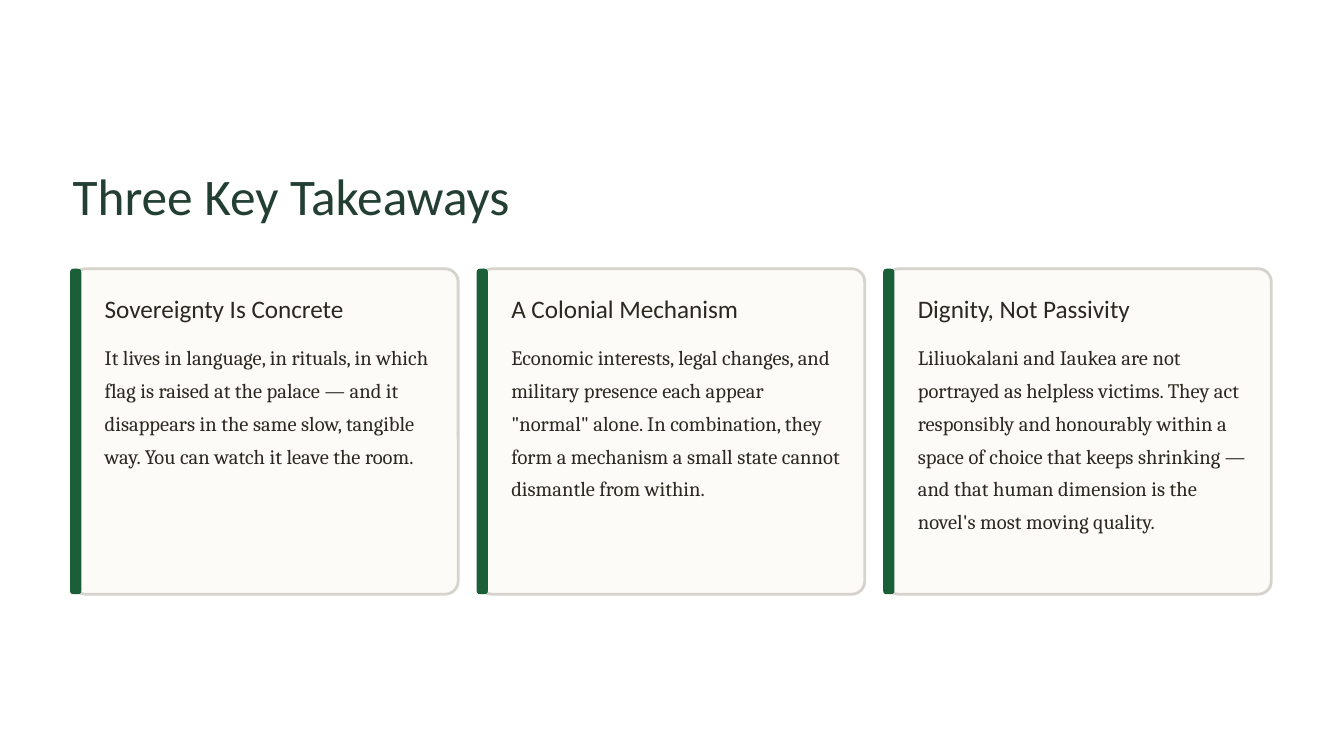
"""Build the three key takeaways slide."""
from pptx import Presentation
from pptx import util as u
from pptx.dml import color
from pptx.enum import shapes, text

TAKEAWAYS = [
    ("Sovereignty Is Concrete",
     "It lives in language, in rituals, in which flag is raised at the palace — and it "
     "disappears in the same slow, tangible way. You can watch it leave the room."),
    ("A Colonial Mechanism",
     "Economic interests, legal changes, and military presence each appear \"normal\" alone. "
     "In combination, they form a mechanism a small state cannot dismantle from within."),
    ("Dignity, Not Passivity",
     "Liliuokalani and Iaukea are not portrayed as helpless victims. They act responsibly and "
     "honourably within a space of choice that keeps shrinking — and that human dimension is "
     "the novel's most moving quality."),
]


def rgb(value):
    """Turn a hex string into a colour."""
    return color.RGBColor.from_string(value)


class TakeawayPage:
    """Hold the style and the current slide."""

    HEADING_FONT, BODY_FONT = "Calibri", "Cambria"
    TITLE, INK, ACCENT = "233E32", "2C2821", "1B5F39"
    CARD, BORDER = "FCFBF8", "D6D3CC"
    LEFT, TOP, WIDTH, HEIGHT, STEP = 38.9, 144, 206.6, 174.4, 217.8

    def __init__(self, deck):
        """Add a title-only slide to the deck."""
        self.page = deck.slides.add_slide(deck.slide_layouts[5])

    def set_text(self, box, words, size, font, ink, spacing):
        """Fill a box with one left-aligned paragraph."""
        frame = box.text_frame
        frame.text = words
        frame.word_wrap = True
        frame.auto_size = text.MSO_AUTO_SIZE.NONE
        frame.vertical_anchor = text.MSO_ANCHOR.TOP
        frame.margin_left = frame.margin_right = frame.margin_top = frame.margin_bottom = 0
        para = frame.paragraphs[0]
        para.alignment = text.PP_ALIGN.LEFT
        para.line_spacing = spacing
        span = para.runs[0]
        span.font.size = u.Pt(size)
        span.font.name = font
        span.font.color.rgb = rgb(ink)

    def title(self, words):
        """Place and format the title placeholder."""
        box = self.page.shapes.title
        box.left, box.top, box.width, box.height = map(u.Pt, (self.LEFT, 86.4, 400, 34.6))
        self.set_text(box, words, 27.5, self.HEADING_FONT, self.TITLE, 1.04)

    def label(self, left, top, width, height, *style):
        """Add a text box."""
        box = self.page.shapes.add_textbox(*map(u.Pt, (left, top, width, height)))
        self.set_text(box, *style)

    def panel(self, left, width, rounding, fill, border=None):
        """Add a rounded rectangle as tall as a card."""
        box = self.page.shapes.add_shape(
            shapes.MSO_SHAPE.ROUNDED_RECTANGLE,
            *map(u.Pt, (left, self.TOP, width, self.HEIGHT)))
        box.adjustments[0] = rounding
        box.shadow.inherit = False
        box.fill.solid()
        box.fill.fore_color.rgb = rgb(fill)
        if border:
            box.line.color.rgb = rgb(border)
            box.line.width = u.Pt(1.5)
        else:
            box.line.fill.background()

    def card(self, column, heading, body):
        """Add a card with its accent bar, heading and body."""
        left = self.LEFT + column * self.STEP
        self.panel(left, self.WIDTH, 0.04, self.CARD, self.BORDER)
        self.panel(left - 1.3, 6, 0.28, self.ACCENT)
        self.label(left + 17.2, 156.4, 176.5, 17.3, heading, 13.5, self.HEADING_FONT, self.INK, 1.04)
        self.label(left + 17.2, 180.7, 176.5, 125.3, body, 11, self.BODY_FONT, self.INK, 1.33)


def main():
    """Build and save the deck."""
    deck = Presentation()
    deck.slide_width, deck.slide_height = u.Pt(720), u.Pt(405)
    page = TakeawayPage(deck)
    page.title("Three Key Takeaways")
    for column, (heading, body) in enumerate(TAKEAWAYS):
        page.card(column, heading, body)
    deck.save("out.pptx")


if __name__ == "__main__":
    main()
